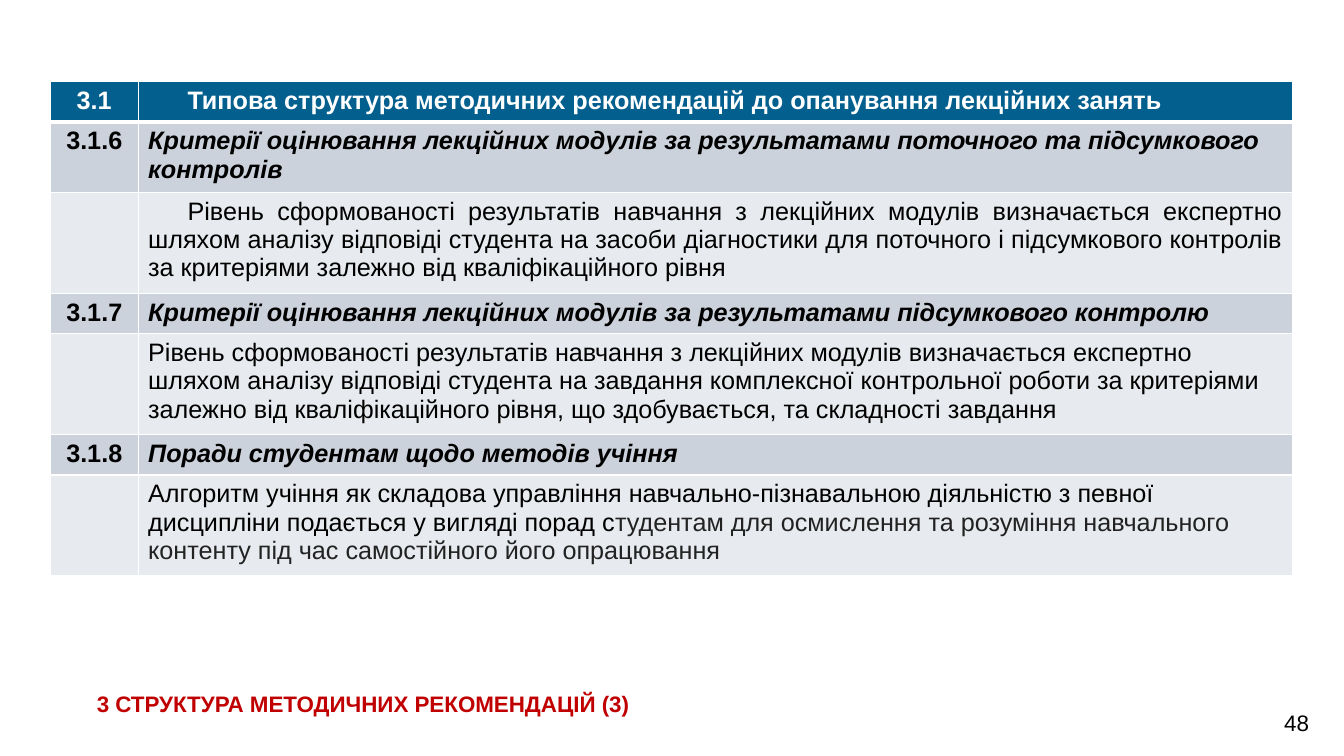
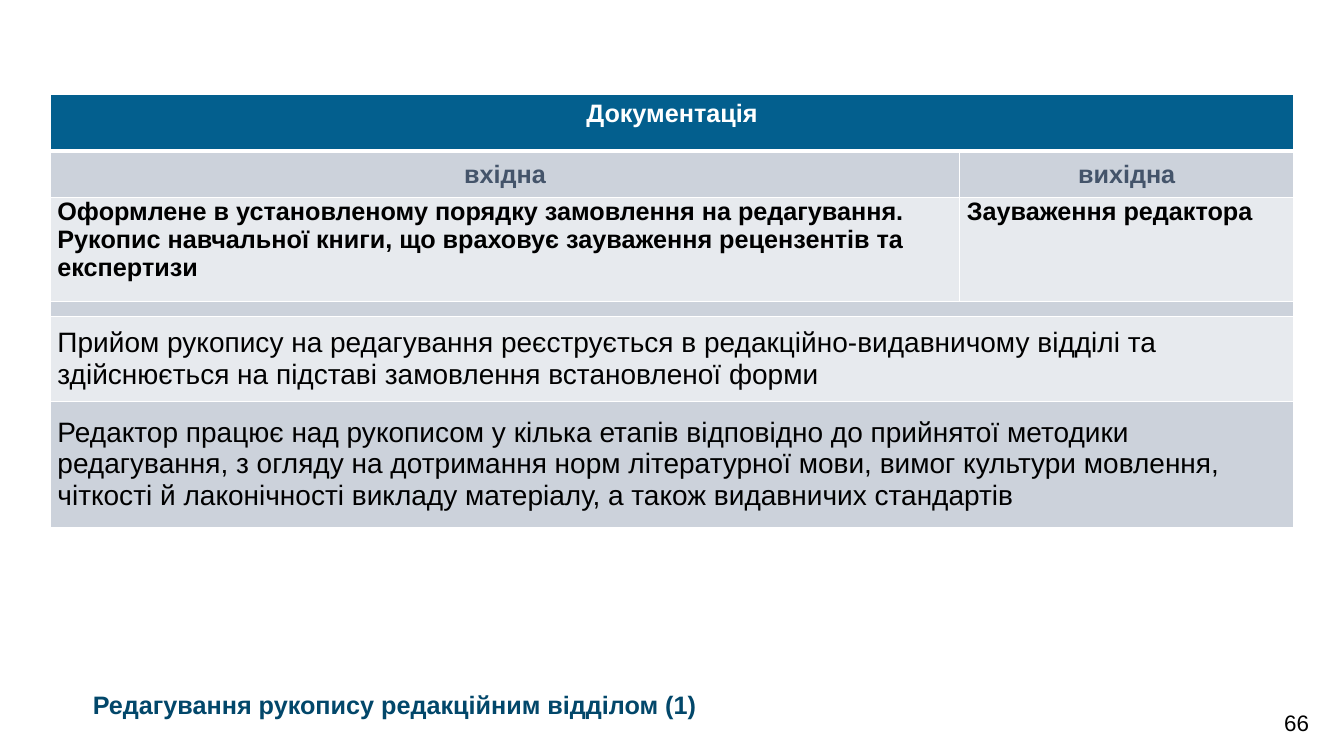
from dataclasses import dataclass

from lxml import etree
from pptx import Presentation
from pptx import util as u
from pptx.dml.color import RGBColor
from pptx.enum import text
from pptx.oxml.ns import qn

FONT = "Arial"
COLORS = {
    "header": "035F8E",
    "dark_band": "CCD2DB",
    "light_band": "E7EAEE",
    "white": "FFFFFF",
    "black": "000000",
    "charcoal": "222222",
    "slate": "44546A",
    "red": "C00000",
    "navy": "02476A",
}
SLIDE_WIDTH, SLIDE_HEIGHT = 13.33, 7.5
TABLE_LEFT = 0.5
LEFT, CENTER, JUSTIFY = text.PP_ALIGN.LEFT, text.PP_ALIGN.CENTER, text.PP_ALIGN.JUSTIFY
TOP, MIDDLE = text.MSO_ANCHOR.TOP, text.MSO_ANCHOR.MIDDLE
WIDE_MARGINS = (0.1, 0.05)
TIGHT_MARGINS = (0.07, 0)


@dataclass(frozen=True)
class Style:
    size: float = 18
    color: str = "black"
    bold: bool = False
    italic: bool = False
    align: text.PP_ALIGN = LEFT
    indent: float = 0
    anchor: text.MSO_ANCHOR = TOP
    margins: tuple[float, float] = WIDE_MARGINS


@dataclass(frozen=True)
class Cell:
    """Table cell; each line is a paragraph, and the tail ends the last one."""
    words: str = ""
    style: Style = Style()
    tail: str = ""
    tail_color: str = "charcoal"


@dataclass(frozen=True)
class Page:
    number: int
    title: str
    title_style: Style
    title_box: tuple[float, float, float, float]
    table_top: float
    columns: list[float]
    rows: list[float]
    cells: list[list[Cell]]


def rgb(name: str) -> RGBColor:
    return RGBColor.from_string(COLORS[name])


def format_run(run, style: Style, color: str) -> None:
    font = run.font
    font.name, font.size = FONT, u.Pt(style.size)
    font.bold, font.italic = style.bold, style.italic
    font.color.rgb = rgb(color)


def write(text_frame, words: str, style: Style) -> None:
    text_frame.text = words
    text_frame.word_wrap = True
    for paragraph in text_frame.paragraphs:
        paragraph.alignment = style.align
        if style.indent:
            properties = paragraph._p.get_or_add_pPr()
            properties.set("marL", "0")
            properties.set("indent", str(u.Inches(style.indent)))
        for run in paragraph.runs:
            format_run(run, style, style.color)


def set_borders(cell, widths: dict[str, float]) -> None:
    properties = cell._tc.get_or_add_tcPr()
    for position, (side, width) in enumerate(widths.items()):
        line = etree.Element(qn(f"a:ln{side}"), w=str(u.Pt(width)))
        fill = etree.SubElement(line, qn("a:solidFill"))
        etree.SubElement(fill, qn("a:srgbClr"), val=COLORS["white"])
        properties.insert(position, line)


def fill_cell(cell, content: Cell) -> None:
    style = content.style
    cell.vertical_anchor = style.anchor
    horizontal, vertical = map(u.Inches, style.margins)
    cell.margin_left = cell.margin_right = horizontal
    cell.margin_top = cell.margin_bottom = vertical
    write(cell.text_frame, content.words, style)
    paragraph = cell.text_frame.paragraphs[-1]
    if content.tail:
        run = paragraph.add_run()
        run.text = content.tail
        format_run(run, style, content.tail_color)
    if not content.words:
        etree.SubElement(paragraph._p, qn("a:endParaRPr"), sz=str(int(style.size * 100)))


def band_color(row: int) -> str:
    if row == 0:
        return "header"
    return "dark_band" if row % 2 else "light_band"


def add_banded_table(slide, page: Page) -> None:
    """Draw the table; a row with a single cell spans all columns."""
    table = slide.shapes.add_table(
        len(page.rows), len(page.columns), u.Inches(TABLE_LEFT), u.Inches(page.table_top),
        u.Inches(sum(page.columns)), u.Inches(sum(page.rows))).table
    for column, width in zip(table.columns, page.columns):
        column.width = u.Inches(width)
    for index, (height, contents) in enumerate(zip(page.rows, page.cells)):
        table.rows[index].height = u.Inches(height)
        row_cells = list(table.rows[index].cells)
        widths = {"L": 1, "R": 1, "T": 3 if index == 1 else 1, "B": 3 if index == 0 else 1}
        for cell in row_cells:
            cell.fill.solid()
            cell.fill.fore_color.rgb = rgb(band_color(index))
            set_borders(cell, widths)
        if len(contents) == 1:
            row_cells[0].merge(row_cells[-1])
        for cell, content in zip(row_cells, contents):
            fill_cell(cell, content)


def add_title(slide, page: Page) -> None:
    title = slide.shapes.title
    title.left, title.top, title.width, title.height = map(u.Inches, page.title_box)
    write(title.text_frame, page.title, page.title_style)
    title.text_frame.auto_size = text.MSO_AUTO_SIZE.NONE
    title.text_frame.vertical_anchor = TOP


def add_page_number(slide, number: int) -> None:
    box = slide.shapes.add_textbox(
        u.Inches(SLIDE_WIDTH - 0.79), u.Inches(SLIDE_HEIGHT - 0.51), u.Inches(0.64), u.Inches(0.37))
    write(box.text_frame, str(number), Style(size=16, align=CENTER))


def add_page(presentation, page: Page) -> None:
    slide = presentation.slides.add_slide(presentation.slide_layouts[5])
    add_page_number(slide, page.number)
    add_title(slide, page)
    add_banded_table(slide, page)


SECTION_NUMBER = Style(bold=True, align=CENTER)
SECTION_NAME = Style(bold=True, italic=True)
BODY = Style()
INDENTED_BODY = Style(align=JUSTIFY, indent=0.39)
COLUMN_NAME = Style(color="slate", bold=True, align=CENTER, anchor=MIDDLE, margins=TIGHT_MARGINS)
DOCUMENT = Style(bold=True, margins=TIGHT_MARGINS)
NOTE = Style(size=20, anchor=MIDDLE, margins=TIGHT_MARGINS)

HEADING_ROW, TEXT_ROW = 0.4, 1.0

PAGES = [
    Page(
        number=48,
        title="3 СТРУКТУРА МЕТОДИЧНИХ РЕКОМЕНДАЦІЙ (3)",
        title_style=Style(size=16, color="red", bold=True),
        title_box=(0.86, 6.8, 6.65, 0.37),
        table_top=0.81,
        columns=[0.87, 11.45],
        rows=[HEADING_ROW, 0.7, TEXT_ROW] + [HEADING_ROW, TEXT_ROW] * 2,
        cells=[
            [Cell("3.1", Style(color="white", bold=True, align=CENTER)),
             Cell("Типова структура методичних рекомендацій до опанування лекційних занять",
                  Style(color="white", bold=True, align=JUSTIFY, indent=0.39))],
            [Cell("3.1.6", SECTION_NUMBER),
             Cell("Критерії оцінювання лекційних модулів за результатами поточного та "
                  "підсумкового контролів", SECTION_NAME)],
            [Cell(),
             Cell("Рівень сформованості результатів навчання з лекційних модулів визначається "
                  "експертно шляхом аналізу відповіді студента на засоби діагностики для "
                  "поточного і підсумкового контролів за критеріями залежно від "
                  "кваліфікаційного рівня", INDENTED_BODY)],
            [Cell("3.1.7", SECTION_NUMBER),
             Cell("Критерії оцінювання лекційних модулів за результатами підсумкового контролю",
                  SECTION_NAME)],
            [Cell(),
             Cell("Рівень сформованості результатів навчання з лекційних модулів визначається "
                  "експертно шляхом аналізу відповіді студента на завдання комплексної "
                  "контрольної роботи за критеріями залежно від кваліфікаційного рівня, що "
                  "здобувається, та складності завдання", BODY)],
            [Cell("3.1.8", SECTION_NUMBER),
             Cell("Поради студентам щодо методів учіння", SECTION_NAME)],
            [Cell(),
             Cell("Алгоритм учіння як складова управління навчально-пізнавальною діяльністю з "
                  "певної дисципліни подається у вигляді порад с", BODY,
                  tail="тудентам для осмислення та розуміння навчального контенту під час "
                       "самостійного його опрацювання")],
        ],
    ),
    Page(
        number=66,
        title="Редагування рукопису редакційним відділом (1)",
        title_style=Style(color="navy", bold=True),
        title_box=(0.82, 6.79, 7.9, 0.4),
        table_top=0.94,
        columns=[9.02, 3.31],
        rows=[0.56, 0.46, 1.03, 0.15, 0.84, 1.25],
        cells=[
            [Cell("Документація", Style(color="white", bold=True, align=CENTER))],
            [Cell("вхідна", COLUMN_NAME), Cell("вихідна", COLUMN_NAME)],
            [Cell("Оформлене в установленому порядку замовлення на редагування.\n"
                  "Рукопис навчальної книги, що враховує зауваження рецензентів та експертизи",
                  DOCUMENT),
             Cell("Зауваження редактора", DOCUMENT)],
            [Cell(style=Style(size=8, margins=(0, 0)))],
            [Cell("Прийом рукопису на редагування реєструється в редакційно-видавничому "
                  "відділі та здійснюється на підставі замовлення встановленої форми", NOTE)],
            [Cell("Редактор працює над рукописом у кілька етапів відповідно до прийнятої "
                  "методики редагування, з огляду на дотримання норм літературної мови, вимог "
                  "культури мовлення, чіткості й лаконічності викладу матеріалу, а також "
                  "видавничих стандартів", NOTE)],
        ],
    ),
]


def main() -> None:
    presentation = Presentation()
    presentation.slide_width = u.Inches(SLIDE_WIDTH)
    presentation.slide_height = u.Inches(SLIDE_HEIGHT)
    for page in PAGES:
        add_page(presentation, page)
    presentation.save("out.pptx")


if __name__ == "__main__":
    main()
